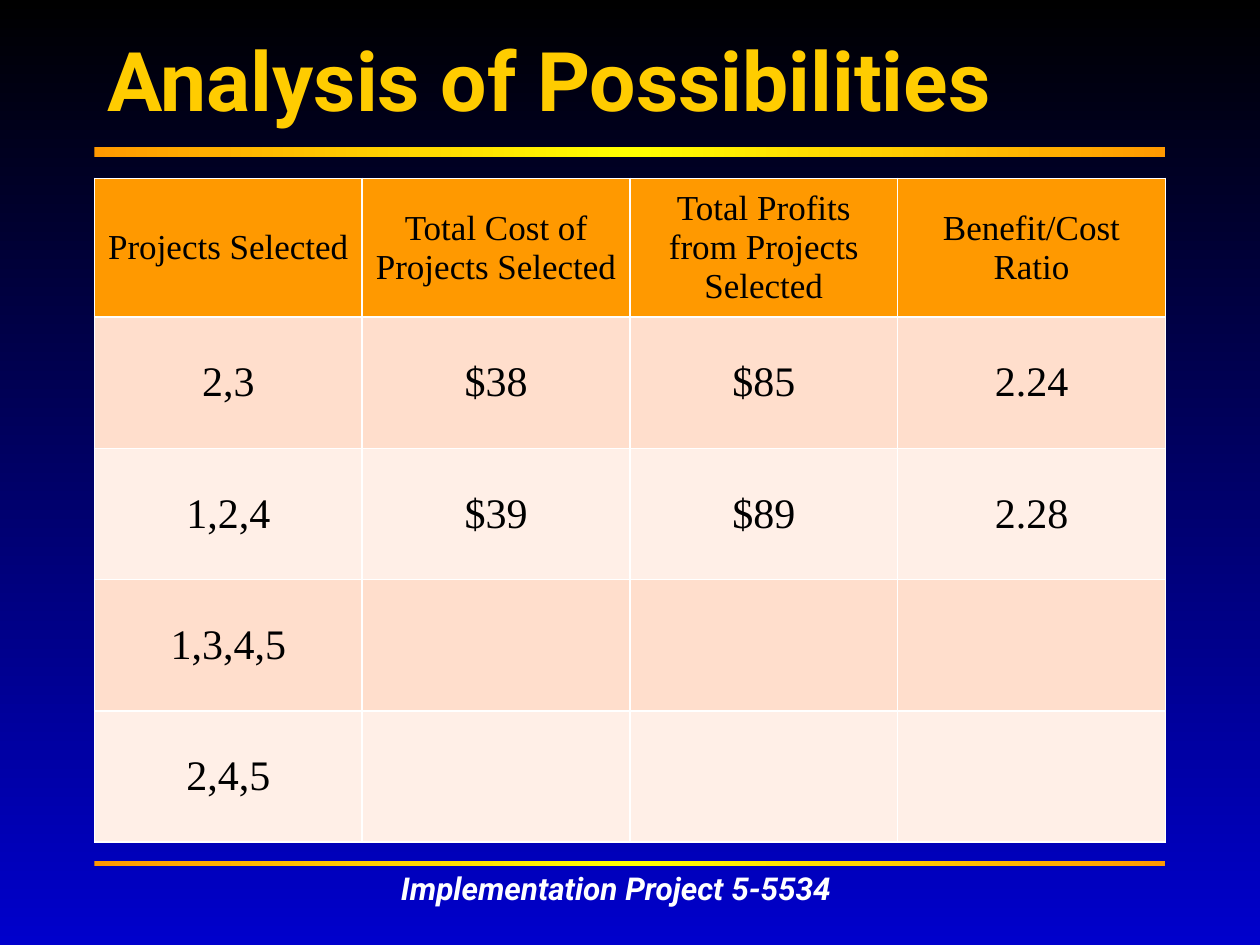
"""Build the Analysis of Possibilities slide with its project table."""
from copy import deepcopy

from lxml.etree import SubElement
from pptx import Presentation
from pptx.dml.color import RGBColor
from pptx.enum.shapes import MSO_SHAPE
from pptx.enum.text import MSO_ANCHOR, MSO_AUTO_SIZE, PP_ALIGN
from pptx.oxml.ns import qn
from pptx.util import Pt

BLACK = RGBColor(0x00, 0x00, 0x00)
BLUE = RGBColor(0x00, 0x00, 0xCC)
WHITE = RGBColor(0xFF, 0xFF, 0xFF)
GOLD = RGBColor(0xFF, 0xCC, 0x00)
ORANGE = RGBColor(0xFF, 0x99, 0x00)
YELLOW = RGBColor(0xFF, 0xFF, 0x00)
PEACH = RGBColor(0xFF, 0xDE, 0xCC)
CREAM = RGBColor(0xFF, 0xEF, 0xE7)

LEFT, WIDTH = 54, 612
PROJECT_ROWS = [
    ["Projects Selected", "Total Cost of Projects Selected",
     "Total Profits from Projects Selected", "Benefit/Cost Ratio"],
    ["2,3", "$38", "$85", "2.24"],
    ["1,2,4", "$39", "$89", "2.28"],
    ["1,3,4,5", "", "", ""],
    ["2,4,5", "", "", ""],
]


class SlideBuilder:
    """Hold the slide and its style, and add each kind of element."""

    heading_font = "Roboto"
    table_font = "Times New Roman"

    def __init__(self, slide):
        self.slide = slide

    def gradient(self, fill, element, colors, angle):
        """Fill with evenly spaced colour stops."""
        fill.gradient()
        fill.gradient_angle = angle
        stop_list = next(element.iter(qn("a:gsLst")))
        while len(stop_list) < len(colors):
            stop_list.append(deepcopy(stop_list[0]))
        for index, (stop, color) in enumerate(zip(fill.gradient_stops, colors)):
            stop.position = index / (len(colors) - 1)
            stop.color.rgb = color

    def background(self, colors):
        """Shade the slide from top to bottom."""
        self.gradient(self.slide.background.fill, self.slide.element, colors, 270)

    def font(self, paragraph, name, size, color, bold=False, italic=False):
        """Set the font of a whole paragraph."""
        font = paragraph.font
        font.name, font.size = name, Pt(size)
        font.bold, font.italic = bold, italic
        font.color.rgb = color

    def title(self, text, height):
        """Move and format the title placeholder."""
        title = self.slide.shapes.title
        title.left, title.top = Pt(LEFT), Pt(0)
        title.width, title.height = Pt(WIDTH), Pt(height)
        frame = title.text_frame
        frame.text = text
        frame.auto_size = MSO_AUTO_SIZE.NONE
        frame.vertical_anchor = MSO_ANCHOR.MIDDLE
        paragraph = frame.paragraphs[0]
        paragraph.alignment = PP_ALIGN.LEFT
        self.font(paragraph, self.heading_font, 47, GOLD, bold=True)

    def rule(self, top, height):
        """Add a glowing horizontal bar."""
        bar = self.slide.shapes.add_shape(
            MSO_SHAPE.RECTANGLE, Pt(LEFT), Pt(top), Pt(WIDTH), Pt(height))
        bar.shadow.inherit = False
        bar.line.fill.background()
        self.gradient(bar.fill, bar.element, [ORANGE, YELLOW, ORANGE], 0)

    def footer(self, text, left, top, width, height):
        """Add the footer line."""
        box = self.slide.shapes.add_textbox(Pt(left), Pt(top), Pt(width), Pt(height))
        frame = box.text_frame
        frame.text = text
        frame.word_wrap = False
        frame.auto_size = MSO_AUTO_SIZE.SHAPE_TO_FIT_TEXT
        paragraph = frame.paragraphs[0]
        paragraph.alignment = PP_ALIGN.LEFT
        self.font(paragraph, self.heading_font, 18, WHITE, bold=True, italic=True)

    def borders(self, cell, color, width):
        """Draw all four borders of a cell."""
        properties = cell._tc.get_or_add_tcPr()
        for position, side in enumerate(("a:lnL", "a:lnR", "a:lnT", "a:lnB")):
            line = SubElement(properties, qn(side), w=str(Pt(width)))
            properties.insert(position, line)
            fill = SubElement(line, qn("a:solidFill"))
            SubElement(fill, qn("a:srgbClr"), val=str(color))

    def table(self, rows, top, height):
        """Add a table with an orange header and alternating rows."""
        table = self.slide.shapes.add_table(
            len(rows), len(rows[0]), Pt(LEFT), Pt(top), Pt(WIDTH), Pt(height)).table
        for row_index, texts in enumerate(rows):
            is_header = row_index == 0
            band = PEACH if row_index % 2 else CREAM
            for column_index, text in enumerate(texts):
                cell = table.cell(row_index, column_index)
                cell.text = text
                cell.vertical_anchor = MSO_ANCHOR.MIDDLE
                cell.fill.solid()
                cell.fill.fore_color.rgb = ORANGE if is_header else band
                self.borders(cell, WHITE, 1)
                paragraph = cell.text_frame.paragraphs[0]
                paragraph.alignment = PP_ALIGN.CENTER
                self.font(paragraph, self.table_font, 20 if is_header else 24, BLACK)


def main():
    """Build and save the presentation."""
    presentation = Presentation()
    presentation.slide_width, presentation.slide_height = Pt(720), Pt(540)
    slide = presentation.slides.add_slide(presentation.slide_layouts[5])
    builder = SlideBuilder(slide)
    builder.background([BLACK, BLUE])
    builder.rule(84, 6)
    builder.footer("Implementation Project 5-5534", 222, 493, 284, 29)
    builder.rule(492, 3)
    builder.title("Analysis of Possibilities", 90)
    builder.table(PROJECT_ROWS, 102, 375)
    presentation.save("out.pptx")


if __name__ == "__main__":
    main()
